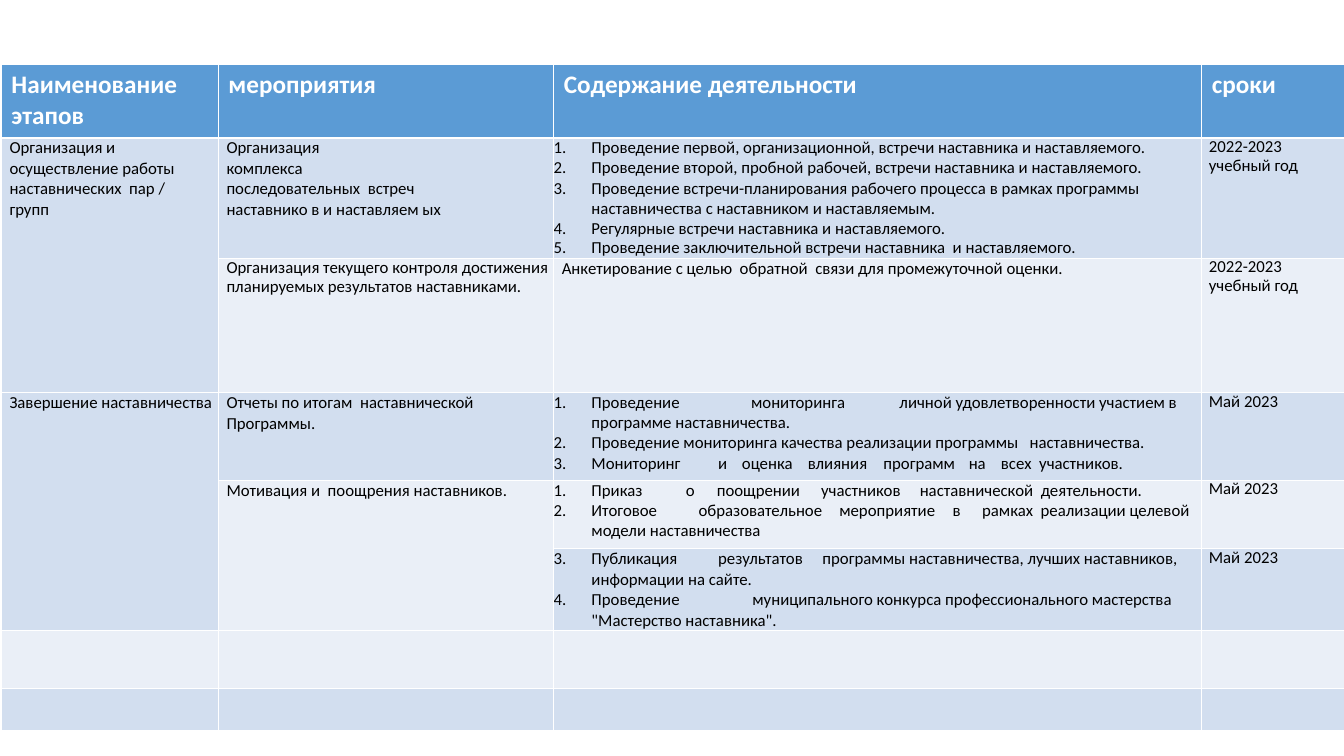
from lxml import etree
from pptx import Presentation
from pptx.dml.color import RGBColor
from pptx.oxml.ns import qn
from pptx.util import Pt

HEADER_FILL, DARK_BAND, LIGHT_BAND = "5B9BD5", "D2DEEF", "EAEFF7"
HEADER_FONT = {"name": "Calibri", "size": Pt(18), "bold": True}
BODY_FONT = {"name": "Calibri", "size": Pt(12), "bold": False}
NO_MARGINS = {"margin_left": 0, "margin_right": 0, "margin_top": 0, "margin_bottom": 0}

TABLE_LEFT, TABLE_TOP = 1, 46
COLUMN_WIDTHS = [155, 239.5, 463, 102]
ROW_HEIGHTS = [52.5, 85.5, 96, 62.5, 49, 58.5, 41, 30]
TEXT_INDENTS = [5.8, 5.8, 5.8, 5]
LIST_INDENT = 27
FIRST_TAB = 41

HEADERS = ["Наименование этапов", "мероприятия", "Содержание деятельности", "сроки"]

# (row, column): paragraphs as (text, line spacing)
YEAR = [("2022-2023", Pt(13.5)), ("учебный год", Pt(13.7))]
MAY = [("Май 2023", Pt(13.4))]
TEXTS = {
    (1, 0): [("Организация и осуществление работы наставнических  пар /", 1.0), ("групп", 1.0)],
    (1, 1): [("Организация", 1.0), ("комплекса", 1.0), ("последовательных  встреч", 1.0),
             ("наставнико в и наставляем ых", 1.0)],
    (1, 3): YEAR,
    (2, 1): [("Организация текущего контроля достижения планируемых результатов наставниками.",
              Pt(13.8))],
    (2, 2): [("Анкетирование с целью  обратной  связи для промежуточной оценки.", 1.0)],
    (2, 3): YEAR,
    (3, 0): [("Завершение наставничества", 0.97)],
    (3, 1): [("Отчеты по итогам  наставнической Программы.", 1.0)],
    (3, 3): MAY,
    (4, 1): [("Мотивация и  поощрения наставников.", 0.98)],
    (4, 3): MAY,
    (5, 3): MAY,
}

# row: (first number, items as (text, line spacing, tab stops))
CONTENT_COLUMN = 2
LISTS = {
    1: (1, [
        ("Проведение первой, организационной, встречи наставника и наставляемого.", 0.98, []),
        ("Проведение второй, пробной рабочей, встречи наставника и наставляемого.", 0.98, []),
        ("Проведение встречи-планирования рабочего процесса в рамках программы "
         "наставничества с наставником и наставляемым.", 1.0, []),
        ("Регулярные встречи наставника и наставляемого.", 1.0, []),
        ("Проведение заключительной встречи наставника  и наставляемого.", Pt(13.5), []),
    ]),
    3: (1, [
        ("Проведение\tмониторинга\tличной удовлетворенности участием в программе "
         "наставничества.", 0.98, [141, 247]),
        ("Проведение мониторинга качества реализации программы   наставничества.", 1.0, []),
        ("Мониторинг\tи\tоценка\tвлияния\tпрограмм\tна\tвсех  участников.", 1.0,
         [117.5, 134.5, 181.5, 235.5, 296.5, 319.5]),
    ]),
    4: (1, [
        ("Приказ\tо\tпоощрении\tучастников\tнаставнической  деятельности.", 0.98,
         [94.5, 116.5, 191, 261.5]),
        ("Итоговое\tобразовательное\tмероприятие\tв\tрамках  реализации целевой модели "
         "наставничества", 1.0, [103.5, 204, 285, 306]),
    ]),
    5: (3, [
        ("Публикация\tрезультатов\tпрограммы наставничества, лучших наставников, "
         "информации на сайте.", 1.0, [117.5, 192]),
        ("Проведение\tмуниципального конкурса профессионального мастерства "
         "\"Мастерство наставника\".", 1.0, [142]),
    ]),
}
# (top row, bottom row, column)
MERGES = [(1, 2, 0), (3, 5, 0), (4, 5, 1)]


def color(hex_text):
    return RGBColor.from_string(hex_text)


def set_values(target, values):
    for name, value in values.items():
        setattr(target, name, value)


def add_text(para, text, font, font_color):
    span = para.add_run()
    span.text = text
    set_values(span.font, font)
    span.font.color.rgb = color(font_color)


def set_numbering(para, start, tab_stops):
    properties = para._p.get_or_add_pPr()
    properties.set("marL", str(Pt(LIST_INDENT)))
    properties.set("indent", str(-Pt(LIST_INDENT)))
    number = etree.SubElement(properties, qn("a:buAutoNum"), type="arabicPeriod")
    if start > 1:
        number.set("startAt", str(start))
    tabs = etree.SubElement(properties, qn("a:tabLst"))
    for stop in [FIRST_TAB] + tab_stops:
        etree.SubElement(tabs, qn("a:tab"), pos=str(Pt(stop)), algn="l")


def body_paragraphs(cell, count):
    set_values(cell, NO_MARGINS)
    frame = cell.text_frame
    return [frame.paragraphs[0]] + [frame.add_paragraph() for _ in range(count - 1)]


def fill_text_cell(cell, lines, indent):
    for para, (text, spacing) in zip(body_paragraphs(cell, len(lines)), lines):
        para._p.get_or_add_pPr().set("marL", str(Pt(indent)))
        para.line_spacing = spacing
        add_text(para, text, BODY_FONT, "000000")


def fill_list_cell(cell, start, items):
    for para, (text, spacing, tab_stops) in zip(body_paragraphs(cell, len(items)), items):
        set_numbering(para, start, tab_stops)
        para.line_spacing = spacing
        add_text(para, text, BODY_FONT, "000000")


def main():
    deck = Presentation()
    deck.slide_width, deck.slide_height = Pt(960), Pt(540)
    page = deck.slides.add_slide(deck.slide_layouts[6])
    table = page.shapes.add_table(
        len(ROW_HEIGHTS), len(COLUMN_WIDTHS), Pt(TABLE_LEFT), Pt(TABLE_TOP),
        Pt(sum(COLUMN_WIDTHS)), Pt(sum(ROW_HEIGHTS))).table
    for column, width in zip(table.columns, COLUMN_WIDTHS):
        column.width = Pt(width)
    for index, (row, height) in enumerate(zip(table.rows, ROW_HEIGHTS)):
        row.height = Pt(height)
        band = DARK_BAND if index % 2 else LIGHT_BAND
        for cell in row.cells:
            cell.fill.solid()
            cell.fill.fore_color.rgb = color(band if index else HEADER_FILL)

    for top, bottom, column in MERGES:
        table.cell(top, column).merge(table.cell(bottom, column))
    for column, header in enumerate(HEADERS):
        para = table.cell(0, column).text_frame.paragraphs[0]
        add_text(para, header, HEADER_FONT, "FFFFFF")
    for (row, column), lines in TEXTS.items():
        fill_text_cell(table.cell(row, column), lines, TEXT_INDENTS[column])
    for row, (start, items) in LISTS.items():
        fill_list_cell(table.cell(row, CONTENT_COLUMN), start, items)

    deck.save("out.pptx")


if __name__ == "__main__":
    main()
